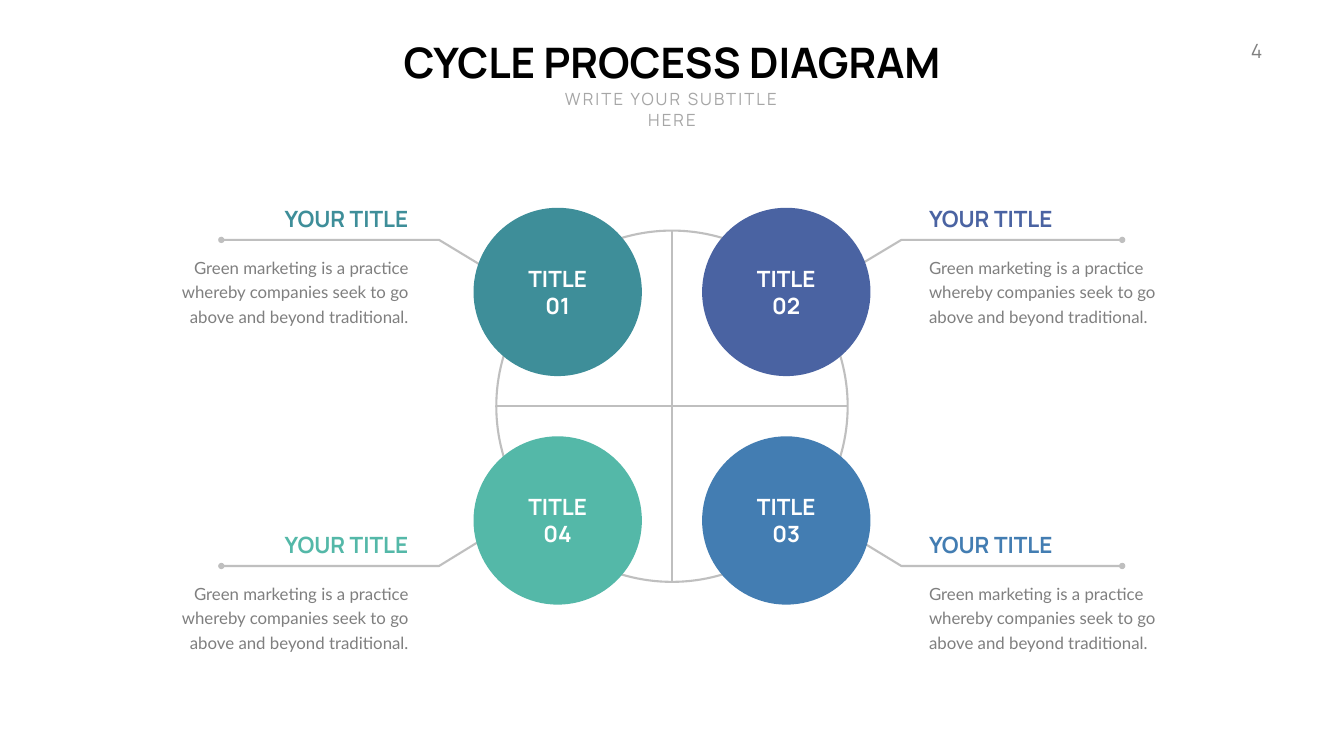
import pptx
import pptx.dml.color
import pptx.enum.shapes
import pptx.enum.text
import pptx.oxml
import pptx.util
from lxml import etree
from pptx.util import Inches

ALIGN = pptx.enum.text.PP_ALIGN
ANCHOR = pptx.enum.text.MSO_ANCHOR
OVAL = pptx.enum.shapes.MSO_SHAPE.OVAL
GREY = "BFBFBF"


def color(hex_string):
    return pptx.dml.color.RGBColor.from_string(hex_string)


def write(shape, text, size, hex_string, align, anchor=ANCHOR.TOP,
          font="Manrope", bold=False, tracking=0):
    frame = shape.text_frame
    frame.word_wrap = True
    frame.auto_size = pptx.enum.text.MSO_AUTO_SIZE.NONE
    frame.vertical_anchor = anchor
    frame.text = text
    para = frame.paragraphs[0]
    para.alignment = align
    para.font.name = font
    para.font.size = pptx.util.Pt(size)
    para.font.bold = bold
    para.font.color.rgb = color(hex_string)
    if tracking:
        para.runs[0].font._element.set("spc", str(tracking * 100))
    return para


deck = pptx.Presentation()
deck.slide_width = Inches(26.66)
deck.slide_height = Inches(15)
page = deck.slides.add_slide(deck.slide_layouts[5])
shapes = page.shapes

# Heading, subtitle and page number
title = shapes.title
title.left, title.top = Inches(7.73), Inches(0.67)
title.width, title.height = Inches(11.2), Inches(1.11)
write(title, "CYCLE PROCESS DIAGRAM", 60, "000000", ALIGN.CENTER, bold=True)

subtitle = shapes.add_textbox(Inches(10.73), Inches(1.72), Inches(5.2), Inches(0.9))
write(subtitle, "WRITE YOUR SUBTITLE HERE", 24, "A6A6A6", ALIGN.CENTER, tracking=3)

number = shapes.add_textbox(Inches(24.24), Inches(0.72), Inches(0.9), Inches(0.57))
write(number, "4", 28, "808080", ALIGN.RIGHT, tracking=3)

# Each side: direction, line start, elbow, line end, text left, alignment
left_side = (-1, 9.8, 8.71, 4.39, 3.43, ALIGN.RIGHT)
right_side = (1, 16.78, 17.88, 22.26, 18.33, ALIGN.LEFT)
# Each row: direction, line start, elbow
top_row = (-1, 5.42, 4.76)
bottom_row = (1, 10.56, 11.23)

steps = [
    ("TITLE 01", "3E8E99", left_side, top_row),
    ("TITLE 02", "4A63A2", right_side, top_row),
    ("TITLE 03", "437DB2", right_side, bottom_row),
    ("TITLE 04", "54B8A8", left_side, bottom_row),
]

# Callout lines with a round end
for name, fill, side, row in steps:
    _, start_x, elbow_x, end_x, _, _ = side
    _, start_y, elbow_y = row
    builder = shapes.build_freeform(Inches(start_x), Inches(start_y))
    builder.add_line_segments([(Inches(elbow_x), Inches(elbow_y)),
                               (Inches(end_x), Inches(elbow_y))], close=False)
    callout = builder.convert_to_shape()
    callout.shadow.inherit = False
    callout.fill.background()
    callout.line.color.rgb = color(GREY)
    callout.line.width = pptx.util.Pt(3)
    tail = etree.SubElement(callout.line._get_or_add_ln(), pptx.oxml.ns.qn("a:tailEnd"))
    tail.set("type", "oval")

# Ring
center_x, center_y, ring_radius = 13.33, 8.06, 3.485
ring = shapes.add_shape(OVAL, Inches(center_x - ring_radius), Inches(center_y - ring_radius),
                        Inches(2 * ring_radius), Inches(2 * ring_radius))
ring.shadow.inherit = False
ring.fill.background()
ring.line.color.rgb = color(GREY)
ring.line.width = pptx.util.Pt(3)

# Cross inside the ring
for reach_x, reach_y in [(0, ring_radius), (ring_radius, 0)]:
    spoke = shapes.add_connector(
        pptx.enum.shapes.MSO_CONNECTOR.STRAIGHT,
        Inches(center_x - reach_x), Inches(center_y - reach_y),
        Inches(center_x + reach_x), Inches(center_y + reach_y))
    spoke.line.color.rgb = color(GREY)
    spoke.line.width = pptx.util.Pt(3)
    etree.SubElement(spoke._element.spPr, pptx.oxml.ns.qn("a:effectLst"))

# Step circles with their callout texts
offset, radius = 2.267, 1.67
for name, fill, side, row in steps:
    direction_x, _, _, _, text_left, align = side
    direction_y, _, elbow_y = row
    circle = shapes.add_shape(
        OVAL,
        Inches(center_x + direction_x * offset - radius),
        Inches(center_y + direction_y * offset - radius),
        Inches(2 * radius), Inches(2 * radius))
    circle.shadow.inherit = False
    circle.fill.solid()
    circle.fill.fore_color.rgb = color(fill)
    circle.line.fill.background()
    circle.text_frame.margin_left = circle.text_frame.margin_right = Inches(0.4)
    write(circle, name, 32, "FFFFFF", ALIGN.CENTER, ANCHOR.MIDDLE, bold=True)

    heading = shapes.add_textbox(Inches(text_left), Inches(elbow_y - 0.74),
                                 Inches(4.77), Inches(0.64))
    write(heading, "YOUR TITLE", 32, fill, align, ANCHOR.BOTTOM, bold=True)

    body = shapes.add_textbox(Inches(text_left), Inches(elbow_y + 0.21),
                              Inches(4.77), Inches(1.52))
    para = write(body, "Green marketing is a practice whereby companies seek to go "
                 "above and beyond traditional.", 24, "7F7F7F", align, font="Lato")
    para.line_spacing = pptx.util.Pt(35)

deck.save("out.pptx")
